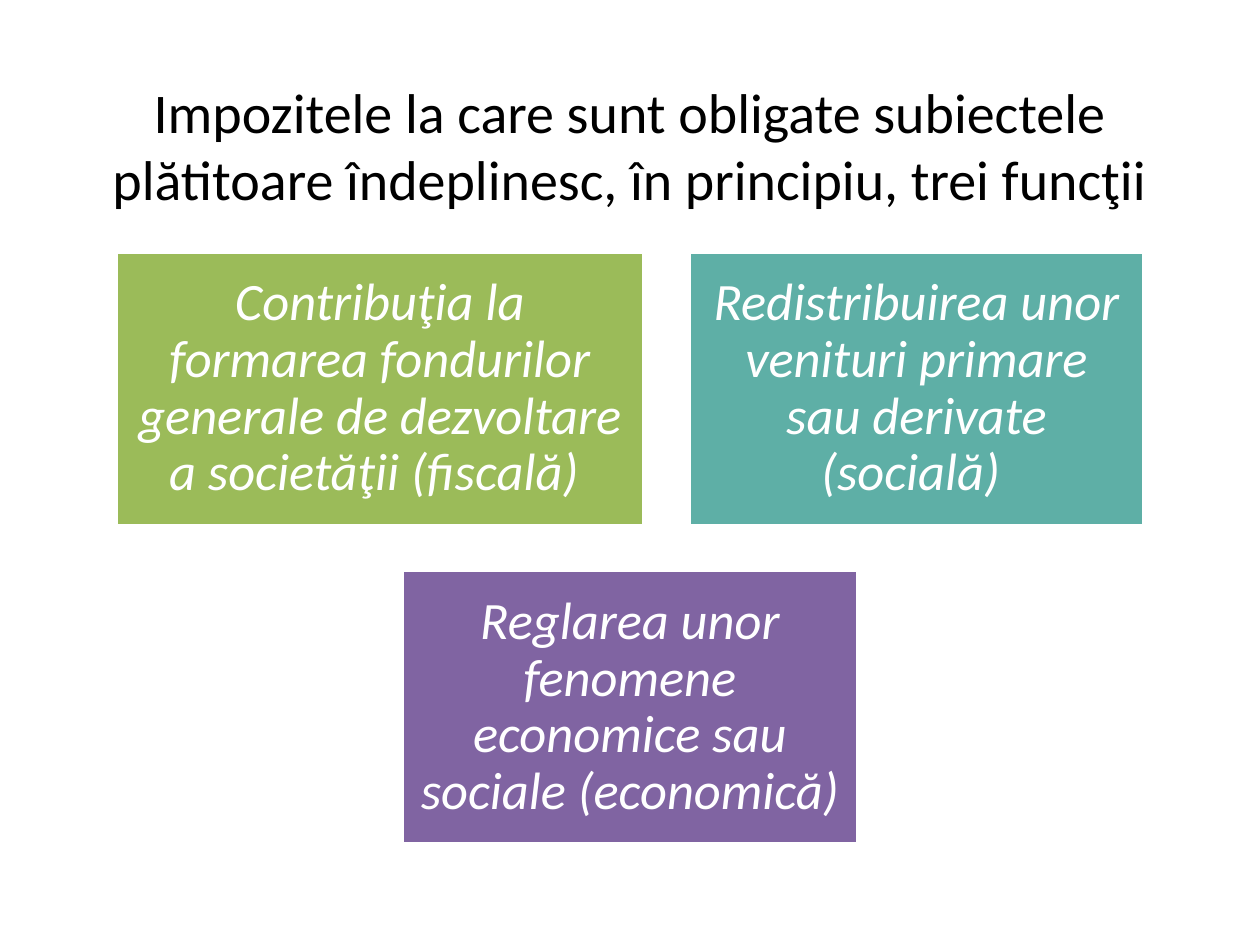
from dataclasses import dataclass

from pptx import Presentation
from pptx import util as u
from pptx.dml.color import RGBColor
from pptx.enum import shapes, text


@dataclass(frozen=True)
class Theme:
    font: str = "Calibri"
    ink: str = "000000"
    white: str = "FFFFFF"
    green: str = "9BBB59"
    teal: str = "5EAFA6"
    violet: str = "8064A2"
    head: int = 32
    body: int = 30
    edge: int = 2


@dataclass(frozen=True)
class Card:
    words: str
    fill: str
    width: float


T = Theme()
WIDE, HIGH = 10, 7.5
TOP, TALL, GAP, INSET = 2, 2.17, 0.36, 0.12

# Cards, row by row; each row is centred on the slide
ROWS = [
    [
        Card("Contribuţia la formarea fondurilor generale de dezvoltare "
             "a societăţii (fiscală) ", T.green, 4.19),
        Card("Redistribuirea unor venituri primare sau derivate (socială) ",
             T.teal, 3.61),
    ],
    [
        Card("Reglarea unor fenomene economice sau sociale (economică) ",
             T.violet, 3.61),
    ],
]


def write(frame, words: str, *, size: int, color: str,
          italic: bool = False, lines: float = 1.0) -> None:
    """Fill a frame with one centred paragraph."""
    frame.word_wrap = True
    frame.vertical_anchor = text.MSO_ANCHOR.MIDDLE
    para = frame.paragraphs[0]
    para.alignment = text.PP_ALIGN.CENTER
    para.line_spacing = lines
    run = para.add_run()
    run.text = words
    run.font.name = T.font
    run.font.size = u.Pt(size)
    run.font.italic = italic
    run.font.color.rgb = RGBColor.from_string(color)


def draw(slide, card: Card, left: float, top: float) -> None:
    """Draw one card with its text."""
    box = slide.shapes.add_shape(
        shapes.MSO_SHAPE.RECTANGLE,
        u.Inches(left), u.Inches(top), u.Inches(card.width), u.Inches(TALL))
    box.shadow.inherit = False
    box.fill.solid()
    box.fill.fore_color.rgb = RGBColor.from_string(card.fill)
    box.line.color.rgb = RGBColor.from_string(T.white)
    box.line.width = u.Pt(T.edge)
    frame = box.text_frame
    frame.margin_left = frame.margin_right = u.Inches(INSET)
    frame.margin_top = frame.margin_bottom = u.Inches(INSET)
    write(frame, card.words, size=T.body, color=T.white,
          italic=True, lines=0.9)


def main() -> None:
    deck = Presentation()
    deck.slide_width, deck.slide_height = u.Inches(WIDE), u.Inches(HIGH)
    slide = deck.slides.add_slide(deck.slide_layouts[5])

    # Title
    title = slide.shapes.title
    title.left, title.top = u.Inches(0.05 * WIDE), u.Inches(0.04 * HIGH)
    title.width, title.height = u.Inches(0.9 * WIDE), u.Inches(1.7)
    write(title.text_frame,
          "Impozitele la care sunt obligate subiectele plătitoare "
          "îndeplinesc, în principiu, trei funcţii",
          size=T.head, color=T.ink)

    # Card rows
    for num, row in enumerate(ROWS):
        span = sum(card.width for card in row) + GAP * (len(row) - 1)
        left = (WIDE - span) / 2
        for card in row:
            draw(slide, card, left, TOP + num * (TALL + GAP))
            left += card.width + GAP

    deck.save("out.pptx")


if __name__ == "__main__":
    main()
